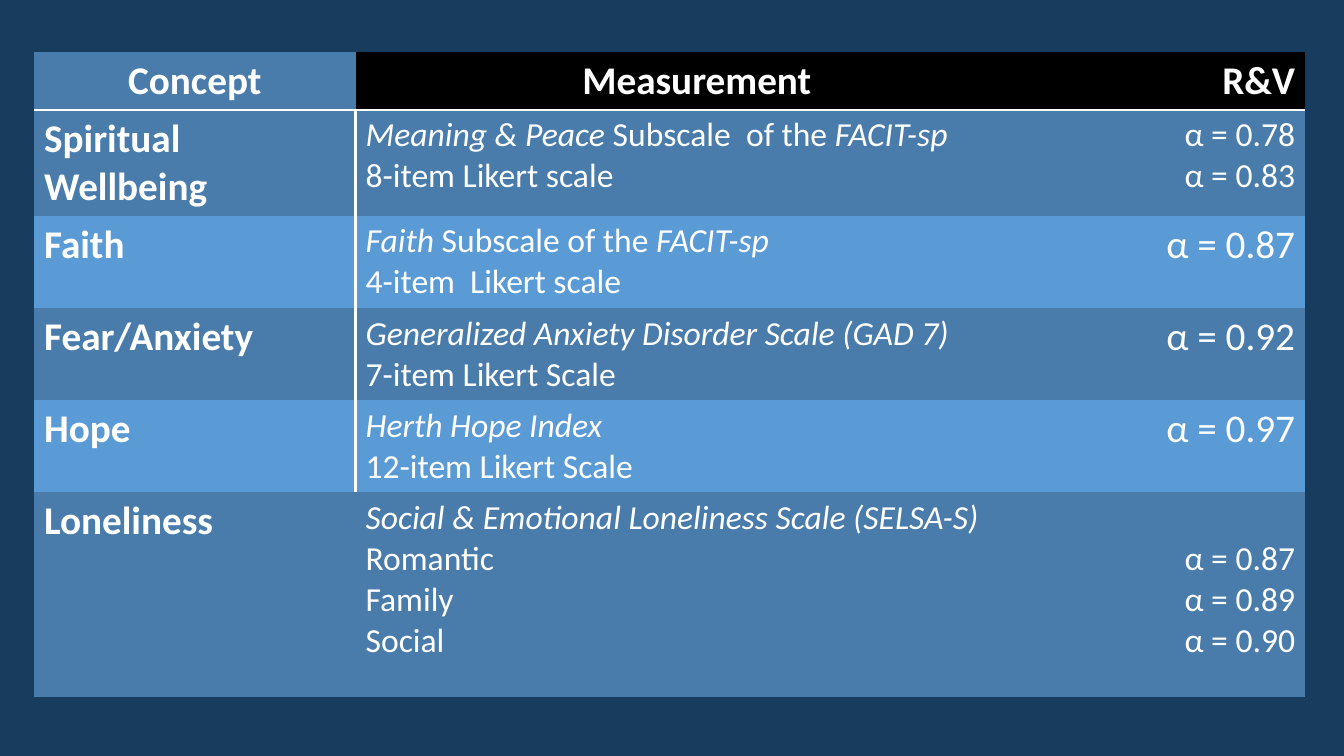
"""Build a slide with a table of concepts, their measurements and reliability."""
from lxml import etree
from pptx import Presentation
from pptx.dml.color import RGBColor
from pptx.enum import text
from pptx.oxml import ns
from pptx.util import Cm, Pt

NAVY, STEEL, SKY, BLACK, WHITE = "173C5D", "497CAB", "5B9BD5", "000000", "FFFFFF"
LEFT, CENTER, RIGHT = text.PP_ALIGN.LEFT, text.PP_ALIGN.CENTER, text.PP_ALIGN.RIGHT
PLAIN_STYLE = "{2D5ABB26-0587-4C30-8999-92F81FD0307C}"

HEADINGS = [("Concept", CENTER, STEEL), ("Measurement", CENTER, BLACK), ("R&V", RIGHT, BLACK)]
# Within a measurement line, parts alternate italic, upright, italic.
MEASURES = [
    ("Spiritual Wellbeing",
     [["Meaning & Peace ", "Subscale  of the ", "FACIT-sp"], ["", "8-item Likert scale"]],
     ["α = 0.78", "α = 0.83"], 24),
    ("Faith",
     [["Faith", " Subscale of the ", "FACIT-sp"], ["", "4-item  Likert scale"]],
     ["α = 0.87"], 28),
    ("Fear/Anxiety",
     [["Generalized Anxiety Disorder Scale (GAD 7)"], ["", "7-item Likert Scale"]],
     ["α = 0.92"], 28),
    ("Hope",
     [["Herth Hope Index"], ["", "12-item Likert Scale"]],
     ["α = 0.97"], 28),
    ("Loneliness",
     [["Social & Emotional Loneliness Scale (SELSA-S)"],
      ["", "Romantic"], ["", "Family"], ["", "Social"]],
     ["α = 0.87", "α = 0.89", "α = 0.90"], 24),
]
COLUMN_WIDTHS = [8.1, 17.2, 6.73]
ROW_HEIGHTS = [1.46, 2.67, 2.32, 2.32, 2.32, 5.17]


def color(value):
    return RGBColor.from_string(value)


def fill_cell(cell, lines, background, size, align=LEFT, bold=False):
    cell.fill.solid()
    cell.fill.fore_color.rgb = color(background)
    for index, parts in enumerate(lines):
        frame = cell.text_frame
        line = frame.add_paragraph() if index else frame.paragraphs[0]
        line.alignment = align
        for order, words in enumerate(parts):
            if not words:
                continue
            run = line.add_run()
            run.text = words
            look = {"name": "Calibri", "size": Pt(size), "bold": bold,
                    "italic": not bold and len(lines) > 0 and align == LEFT and order % 2 == 0}
            for key, value in look.items():
                setattr(run.font, key, value)
            run.font.color.rgb = color(WHITE)


def add_border(cell, side):
    border = etree.Element(ns.qn(f"a:ln{side}"), w=str(Pt(2)))
    solid = etree.SubElement(border, ns.qn("a:solidFill"))
    etree.SubElement(solid, ns.qn("a:srgbClr"), val=WHITE)
    cell._tc.get_or_add_tcPr().insert(0, border)


def main():
    deck = Presentation()
    deck.slide_width, deck.slide_height = Cm(33.87), Cm(19.05)
    slide = deck.slides.add_slide(deck.slide_layouts[6])
    slide.background.fill.solid()
    slide.background.fill.fore_color.rgb = color(NAVY)

    frame = slide.shapes.add_table(
        len(ROW_HEIGHTS), len(COLUMN_WIDTHS), Cm(0.86), Cm(1.31),
        Cm(sum(COLUMN_WIDTHS)), Cm(sum(ROW_HEIGHTS)))
    scales = frame.table
    scales.horz_banding = False
    scales._tbl.tblPr.find(ns.qn("a:tableStyleId")).text = PLAIN_STYLE
    for column, width in zip(scales.columns, COLUMN_WIDTHS):
        column.width = Cm(width)
    for row, height in zip(scales.rows, ROW_HEIGHTS):
        row.height = Cm(height)

    for column, (heading, align, background) in enumerate(HEADINGS):
        cell = scales.cell(0, column)
        fill_cell(cell, [[heading]], background, 28, align, bold=True)
        add_border(cell, "B")

    for row, (concept, measurement, alphas, alpha_size) in enumerate(MEASURES, 1):
        band = STEEL if row % 2 else SKY
        concept_cell, measurement_cell, alpha_cell = scales.rows[row].cells
        fill_cell(concept_cell, [[concept]], band, 28, bold=True)
        fill_cell(measurement_cell, measurement, band, 24)
        fill_cell(alpha_cell, [[alpha] for alpha in alphas], band, alpha_size, RIGHT)
        if row < len(MEASURES):
            add_border(concept_cell, "R")
        if len(alphas) > 2:
            alpha_cell.margin_top = Cm(1.16)

    deck.save("out.pptx")


if __name__ == "__main__":
    main()
